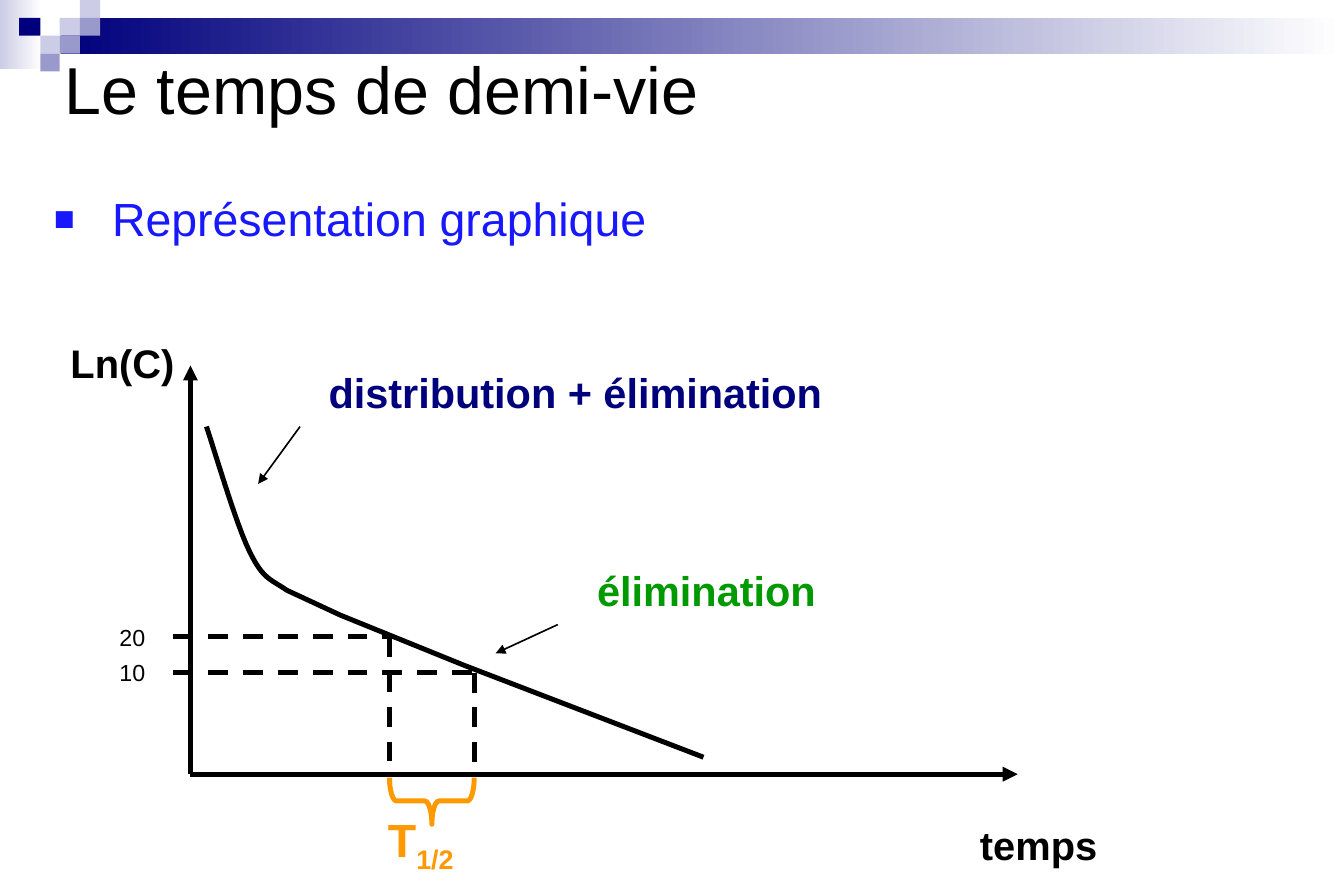
from lxml.etree import SubElement
from pptx import Presentation
from pptx.dml.color import RGBColor
from pptx.enum.dml import MSO_LINE
from pptx.enum.shapes import MSO_CONNECTOR, MSO_SHAPE
from pptx.enum.text import MSO_ANCHOR, MSO_AUTO_SIZE, PP_ALIGN
from pptx.oxml.ns import qn
from pptx.util import Cm, Pt

BLACK = RGBColor(0x00, 0x00, 0x00)
WHITE = RGBColor(0xFF, 0xFF, 0xFF)
NAVY = RGBColor(0x00, 0x00, 0x7D)
LAVENDER = RGBColor(0xCC, 0xCC, 0xE6)
VIOLET = RGBColor(0x99, 0x99, 0xCC)
BLUE = RGBColor(0x18, 0x18, 0xFF)
GREEN = RGBColor(0x00, 0x99, 0x00)
ORANGE = RGBColor(0xFF, 0x99, 0x00)

AXIS_X, AXIS_Y = 4.05, 16.46
TICK_X = 3.68
HALF_LIFE_POINTS = [("20", 8.28, 13.54), ("10", 10.08, 14.3)]

COLUMN_EDGES = [0.41, 0.86, 1.27, 1.7, 2.13]
ROW_HEIGHT = 0.38
MOSAIC = [
    (3, 0, LAVENDER), (0, 1, NAVY), (2, 1, LAVENDER), (3, 1, VIOLET),
    (1, 2, LAVENDER), (2, 2, VIOLET), (1, 3, VIOLET),
]

TIGHT = {"margin_left": Cm(0.18), "margin_right": Cm(0.18),
         "margin_top": Cm(0.08), "margin_bottom": Cm(0.08)}


def apply(target, values):
    for name, value in values.items():
        setattr(target, name, value)


def place(shape, left, top, width, height):
    apply(shape, {"left": Cm(left), "top": Cm(top),
                  "width": Cm(width), "height": Cm(height)})


def style_font(font, size, color, bold=False):
    apply(font, {"name": "Arial", "size": Pt(size), "bold": bold})
    font.color.rgb = color


def add_rectangle(page, left, top, width, height, color, fade=False):
    """Borderless rectangle, plain or fading to white on the right."""
    box = page.shapes.add_shape(
        MSO_SHAPE.RECTANGLE, Cm(left), Cm(top), Cm(width), Cm(height))
    box.shadow.inherit = False
    box.line.fill.background()
    if fade:
        box.fill.gradient()
        box.fill.gradient_angle = 0
        for stop, shade in zip(box.fill.gradient_stops, (color, WHITE)):
            stop.color.rgb = shade
    else:
        box.fill.solid()
        box.fill.fore_color.rgb = color


def add_header(page):
    add_rectangle(page, 0, 0, 0.89, 1.47, LAVENDER, fade=True)
    add_rectangle(page, 1.3, ROW_HEIGHT, 27.28, 0.76, NAVY, fade=True)
    for column, row, color in MOSAIC:
        left, right = COLUMN_EDGES[column:column + 2]
        add_rectangle(page, left, row * ROW_HEIGHT, right - left,
                      ROW_HEIGHT, color)


def add_line(page, start, end, width=3, dashed=False, arrow=False):
    connector = page.shapes.add_connector(
        MSO_CONNECTOR.STRAIGHT, *map(Cm, start + end))
    connector.line.color.rgb = BLACK
    connector.line.width = Pt(width)
    if dashed:
        connector.line.dash_style = MSO_LINE.DASH
    if arrow:
        SubElement(connector.line._get_or_add_ln(), qn("a:tailEnd"),
                   type="triangle")
    SubElement(connector._element.spPr, qn("a:effectLst"))


def add_label(page, area, text, size, color=BLACK, bold=True, wrap=True,
              spacing=None, margins=None):
    box = page.shapes.add_textbox(*map(Cm, area))
    apply(box.text_frame, {"word_wrap": wrap,
                           "auto_size": MSO_AUTO_SIZE.SHAPE_TO_FIT_TEXT,
                           **(margins or {})})
    para = box.text_frame.paragraphs[0]
    if spacing:
        para.line_spacing = spacing
    span = para.add_run()
    span.text = text
    style_font(span.font, size, color, bold)
    return para


def bezier(start, first, second, end, steps=12):
    """Points of a cubic curve after its start."""
    for step in range(1, steps + 1):
        t = step / steps
        weights = ((1 - t) ** 3, 3 * t * (1 - t) ** 2,
                   3 * t ** 2 * (1 - t), t ** 3)
        yield tuple(sum(w * p[axis] for w, p in
                        zip(weights, (start, first, second, end)))
                    for axis in (0, 1))


def add_decay_curve(page):
    start, bend, tail = (4.39, 9.07), (5.31, 11.73), (6.1, 12.55)
    points = [
        *bezier(start, (4.55, 9.53), (5.03, 11.18), bend),
        *bezier(bend, (5.59, 12.32), (5.77, 12.32), tail),
        (7.24, 13.08), (9.88, 14.15), (14.96, 16.1),
    ]
    builder = page.shapes.build_freeform(*map(Cm, start))
    builder.add_line_segments([(Cm(x), Cm(y)) for x, y in points], close=False)
    curve = builder.convert_to_shape()
    curve.shadow.inherit = False
    curve.fill.background()
    curve.line.color.rgb = BLACK
    curve.line.width = Pt(3)


def add_half_life(page):
    """Dashed readings, their values, and the brace marking T1/2."""
    for value, x, y in HALF_LIFE_POINTS:
        add_line(page, (TICK_X, y), (x, y), dashed=True)
        add_line(page, (x, y), (x, 16.41), dashed=True)
        add_label(page, (2.29, y - 0.42, 1.19, 0.84), value, 14, bold=False)
    brace = page.shapes.add_shape(
        MSO_SHAPE.LEFT_BRACE, Cm(8.69), Cm(16.13), Cm(0.99), Cm(1.8))
    brace.rotation = 270
    brace.adjustments[0] = 0.15
    brace.shadow.inherit = False
    brace.fill.background()
    brace.line.color.rgb = ORANGE
    brace.line.width = Pt(3)
    para = add_label(page, (8, 17.12, 2.06, 1.45), "T", 28, ORANGE, wrap=False)
    index = para.add_run()
    index.text = "1/2"
    style_font(index.font, 28, ORANGE, True)
    index.font._element.set("baseline", "-25000")


def add_chart_drawing(page):
    compact = {"spacing": 0.87, "margins": TIGHT}
    add_line(page, (AXIS_X, AXIS_Y), (AXIS_X, 7.77), arrow=True)
    add_line(page, (AXIS_X, AXIS_Y), (21.64, AXIS_Y), arrow=True)
    add_label(page, (20.66, 17.5, 3.3, 1.02), "temps", 24, **compact)
    add_label(page, (1.32, 7.26, 2.7, 1.02), "Ln(C)", 24, **compact)
    add_decay_curve(page)
    add_label(page, (6.81, 7.87, 11.66, 1.07), "distribution + élimination",
              25, NAVY, **compact)
    add_line(page, (6.38, 9.07), (5.49, 10.29), width=1, arrow=True)
    add_label(page, (12.52, 12.09, 6.45, 1.07), "élimination",
              25, GREEN, **compact)
    add_line(page, (11.86, 13.28), (10.54, 13.89), width=1, arrow=True)
    add_half_life(page)


def fill_title(title, text):
    place(title, 1.12, 0.71, 26.97, 2.31)
    title.text_frame.text = text
    apply(title.text_frame, {"vertical_anchor": MSO_ANCHOR.MIDDLE,
                             "auto_size": MSO_AUTO_SIZE.NONE})
    para = title.text_frame.paragraphs[0]
    para.alignment = PP_ALIGN.LEFT
    style_font(para.font, 40, BLACK)


def fill_list(body, text):
    place(body, 0.89, 3.92, 14, 1.8)
    body.text_frame.text = text
    body.text_frame.auto_size = MSO_AUTO_SIZE.NONE
    para = body.text_frame.paragraphs[0]
    para.space_before = Pt(0)
    properties = para._p.get_or_add_pPr()
    properties.set("marL", str(Cm(1.24)))
    properties.set("indent", str(Cm(-1.24)))
    color = SubElement(properties, qn("a:buClr"))
    SubElement(color, qn("a:srgbClr"), val=str(BLUE))
    SubElement(properties, qn("a:buSzPct"), val="75000")
    SubElement(properties, qn("a:buFont"), typeface="Arial")
    SubElement(properties, qn("a:buChar"), char="■")
    style_font(para.font, 28, BLUE)


def main():
    deck = Presentation()
    apply(deck, {"slide_width": Cm(28.58), "slide_height": Cm(19.05)})
    page = deck.slides.add_slide(deck.slide_layouts[1])
    fill_title(page.shapes.title, "Le temps de demi-vie")
    fill_list(page.placeholders[1], "Représentation graphique")
    add_header(page)
    add_chart_drawing(page)
    deck.save("out.pptx")


if __name__ == "__main__":
    main()
